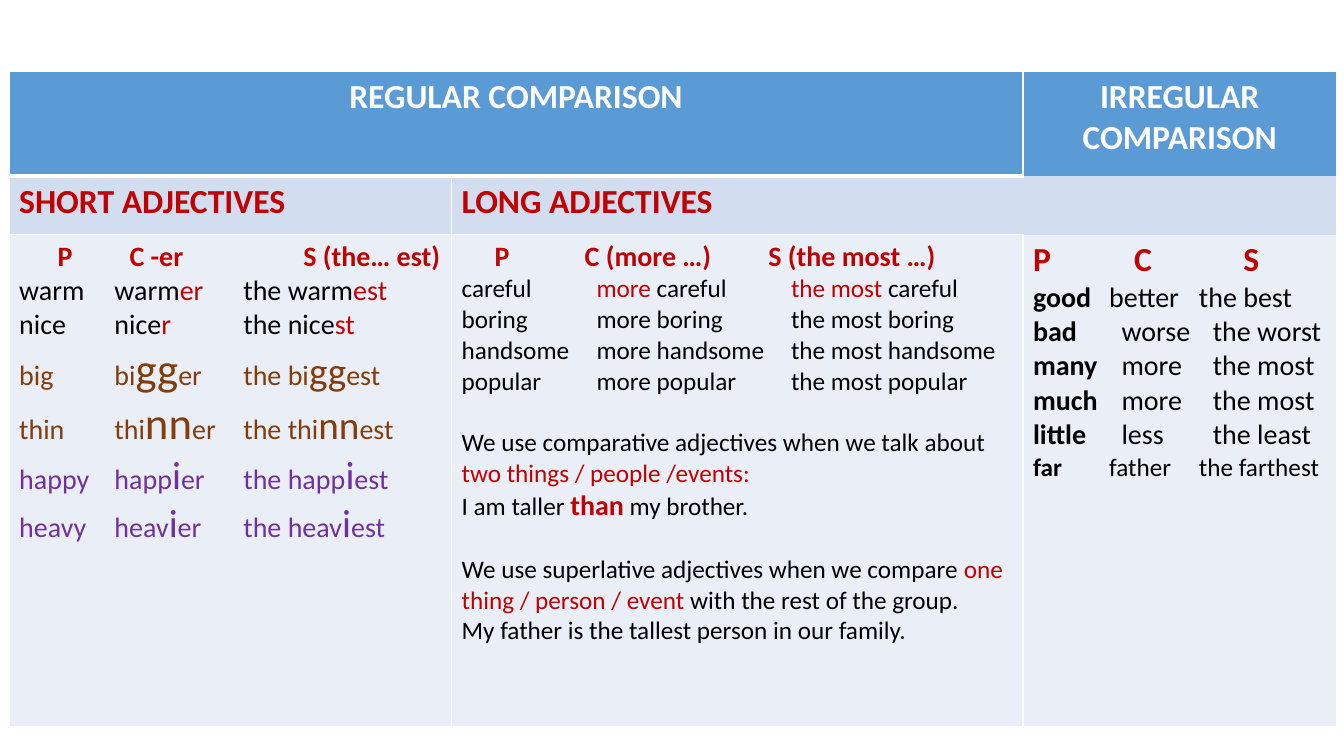
from dataclasses import dataclass

from lxml import etree
from pptx import Presentation
from pptx import util as u
from pptx.dml import color as dml
from pptx.enum import text as txt
from pptx.oxml import ns


@dataclass(frozen=True)
class Theme:
    font: str = "Calibri"
    white: str = "FFFFFF"
    black: str = "000000"
    red: str = "C00000"
    brown: str = "843C0B"
    purple: str = "7030A0"
    header: str = "5B9BD5"
    band: str = "D2DEEF"
    body: str = "EAEFF7"
    heading: int = 24
    normal: int = 20
    small: int = 18
    large: int = 28
    huge: int = 32


THEME = Theme()


@dataclass(frozen=True)
class Span:
    text: str
    color: str | None = None
    size: int | None = None
    bold: bool | None = None


@dataclass(frozen=True)
class Line:
    """A paragraph; its spans inherit colour, size and weight from it."""
    spans: tuple[Span, ...]
    size: int = THEME.normal
    color: str = THEME.black
    bold: bool = False
    centered: bool = False
    stops: tuple[float, ...] = ()
    before: float = 0


@dataclass(frozen=True)
class Panel:
    row: int
    column: int
    fill: str
    lines: tuple[Line, ...]
    borders: dict[str, float]  # edge letter -> width in points


def line(*parts: str | Span, **formats) -> Line:
    """Make a paragraph from plain strings and formatted spans."""
    spans = tuple(Span(part) if isinstance(part, str) else part for part in parts)
    return Line(spans, **formats)


def red(text: str, **formats) -> Span:
    return Span(text, THEME.red, **formats)


def heading(text: str, color: str, **formats) -> Line:
    return line(text, size=THEME.heading, color=color, bold=True, **formats)


# Short adjectives: the changed letters are enlarged
SHORT_STOPS = (2.4, 5.65)


def regular(word: str, comparative: str, superlative: str) -> Line:
    return line(f"{word}\t{word}", red(comparative), f"\tthe {word}",
                red(superlative), stops=SHORT_STOPS)


def changed(word: str, stem: str, letters: str, color: str, size: int) -> Line:
    return line(f"{word}\t{stem}", Span(letters, size=size), f"er\tthe {stem}",
                Span(letters, size=THEME.large), "est",
                color=color, stops=SHORT_STOPS)


short_lines = (
    line("\tP\tC -er\tS (the… est)", color=THEME.red, bold=True,
         stops=(0.97, 2.78, 7.16)),
    regular("warm", "er", "est"),
    regular("nice", "r", "st"),
    changed("big", "bi", "gg", THEME.brown, THEME.huge),
    changed("thin", "thi", "nn", THEME.brown, THEME.huge),
    changed("happy", "happ", "i", THEME.purple, THEME.large),
    changed("heavy", "heav", "i", THEME.purple, THEME.large),
)

# Long adjectives and the rules of use
LONG = {"size": THEME.small, "stops": (3.4, 8.3)}
RULE_GAP = 22
long_lines = (
    line("\tP\tC (more …)\tS (the most …)", color=THEME.red, bold=True,
         stops=(0.83, 3.1, 7.73)),
    line("careful\t", red("more"), " careful\t", red("the most "), "careful", **LONG),
    *(line(f"{word}\tmore {word}\tthe most {word}", **LONG)
      for word in ("boring", "handsome", "popular")),
    line("We use comparative adjectives when we talk about ",
         red("two things / people /events:"), size=THEME.small, before=RULE_GAP),
    line("I am taller ", red("than", size=THEME.normal, bold=True),
         " my brother.", size=THEME.small),
    line("We use superlative adjectives when we compare ",
         red("one thing / person / event"), " with the rest of the group.",
         size=THEME.small, before=RULE_GAP),
    line("My father is the tallest person in our family.", size=THEME.small),
)


# Irregular adjectives
def irregular(word: str, comparative: str, superlative: str,
              stops: tuple[float, float], size: int = THEME.normal) -> Line:
    return line(Span(word, bold=True), f"\t{comparative}\t{superlative}",
                size=size, stops=stops)


NEAR_STOPS, FAR_STOPS = (1.92, 4.18), (2.23, 4.53)
irregular_lines = (
    heading("P\tC\tS", THEME.red, stops=(2.55, 5.3)),
    irregular("good", "better", "the best", NEAR_STOPS),
    irregular("bad", "worse", "the worst", FAR_STOPS),
    irregular("many", "more", "the most", FAR_STOPS),
    irregular("much", "more", "the most", FAR_STOPS),
    irregular("little", "less", "the least", FAR_STOPS),
    irregular("far", "father", "the farthest", NEAR_STOPS, THEME.small),
)

# Table layout
LEFT, TOP = 0.23, 1.8
COLUMN_WIDTHS = (11.15, 14.4, 7.9)
ROW_HEIGHTS = (2.64, 1.47, 12.4)
FRAME = {"L": 1, "R": 1, "T": 1, "B": 1}
PANELS = (
    Panel(0, 0, THEME.header, (heading("REGULAR COMPARISON", THEME.white, centered=True),),
          FRAME | {"B": 3}),
    Panel(0, 1, THEME.header, (), FRAME | {"B": 3}),
    Panel(0, 2, THEME.header, (heading("IRREGULAR COMPARISON", THEME.white, centered=True),),
          {"L": 1, "R": 1, "T": 1}),
    Panel(1, 0, THEME.band, (heading("SHORT ADJECTIVES", THEME.red),), FRAME | {"T": 3}),
    Panel(1, 1, THEME.band, (heading("LONG ADJECTIVES", THEME.red),),
          {"L": 1, "T": 3, "B": 1}),
    Panel(1, 2, THEME.band, (), {}),
    Panel(2, 0, THEME.body, short_lines, FRAME),
    Panel(2, 1, THEME.body, long_lines, FRAME),
    Panel(2, 2, THEME.body, irregular_lines, {"L": 1, "R": 1, "B": 1}),
)


def add_xml(parent, tag: str, **attributes: str):
    return etree.SubElement(parent, ns.qn(tag), attributes)


def set_borders(cell, borders: dict[str, float]) -> None:
    properties = cell._tc.get_or_add_tcPr()
    for edge in "LRTB":
        width = u.Pt(borders.get(edge, 0))
        border = add_xml(properties, f"a:ln{edge}", w=str(width))
        if width:
            add_xml(add_xml(border, "a:solidFill"), "a:srgbClr", val=THEME.white)
        else:
            add_xml(border, "a:noFill")


def write_span(para, text: str, *, size: int, color: str, bold: bool) -> None:
    run = para.add_run()
    run.text = text
    run.font.name = THEME.font
    run.font.size = u.Pt(size)
    run.font.bold = bold
    run.font.color.rgb = dml.RGBColor.from_string(color)


def write_line(para, content: Line) -> None:
    para.alignment = txt.PP_ALIGN.CENTER if content.centered else txt.PP_ALIGN.LEFT
    para.space_before = u.Pt(content.before)
    if content.stops:
        tabs = add_xml(para._p.get_or_add_pPr(), "a:tabLst")
        for stop in content.stops:
            add_xml(tabs, "a:tab", pos=str(u.Cm(stop)), algn="l")
    for span in content.spans:
        write_span(para, span.text, size=span.size or content.size,
                   color=span.color or content.color,
                   bold=content.bold if span.bold is None else span.bold)


def draw_panel(table, panel: Panel) -> None:
    cell = table.cell(panel.row, panel.column)
    set_borders(cell, panel.borders)
    cell.fill.solid()
    cell.fill.fore_color.rgb = dml.RGBColor.from_string(panel.fill)
    frame = cell.text_frame
    for index, content in enumerate(panel.lines):
        write_line(frame.add_paragraph() if index else frame.paragraphs[0], content)


def main() -> None:
    deck = Presentation()
    deck.slide_width, deck.slide_height = u.Cm(33.87), u.Cm(19.05)
    page = deck.slides.add_slide(deck.slide_layouts[6])
    table = page.shapes.add_table(
        len(ROW_HEIGHTS), len(COLUMN_WIDTHS), u.Cm(LEFT), u.Cm(TOP),
        u.Cm(sum(COLUMN_WIDTHS)), u.Cm(sum(ROW_HEIGHTS))).table
    table.horz_banding = False
    for column, width in zip(table.columns, COLUMN_WIDTHS):
        column.width = u.Cm(width)
    for row, height in zip(table.rows, ROW_HEIGHTS):
        row.height = u.Cm(height)
    table.cell(0, 0).merge(table.cell(0, 1))
    for panel in PANELS:
        draw_panel(table, panel)
    deck.save("out.pptx")


if __name__ == "__main__":
    main()
